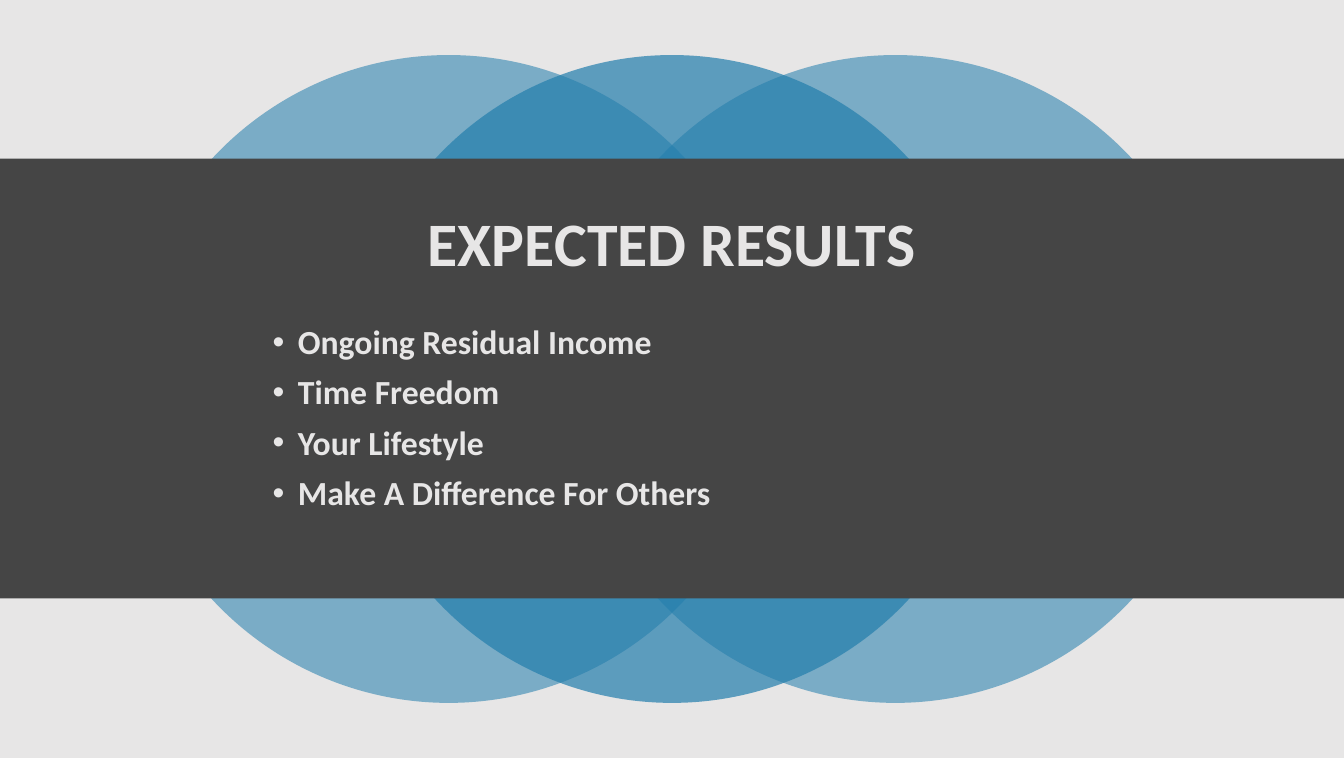
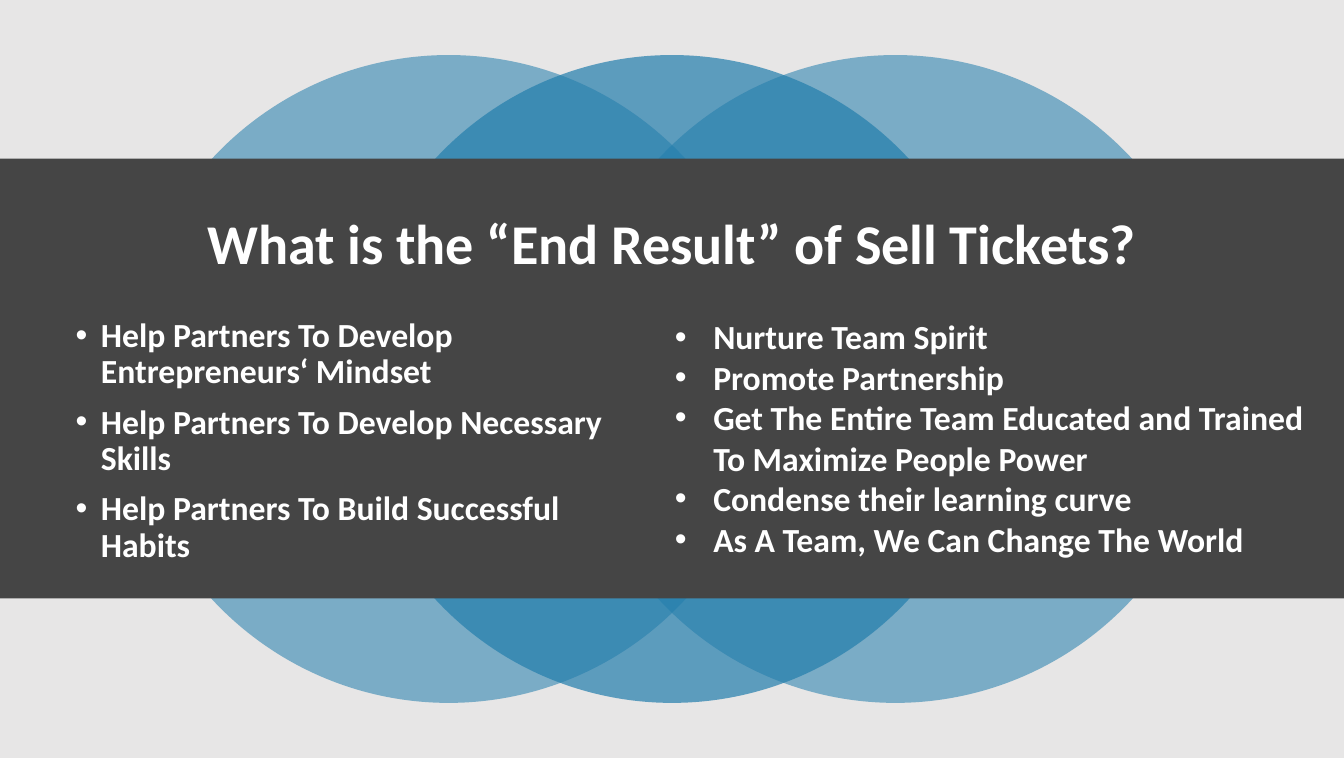
from dataclasses import dataclass
from typing import NamedTuple

from lxml import etree
from pptx import Presentation
from pptx.dml.color import RGBColor
from pptx.enum.shapes import MSO_SHAPE
from pptx.enum.text import MSO_ANCHOR, PP_ALIGN
from pptx.oxml.ns import qn
from pptx.util import Inches, Pt

OVAL, RECTANGLE = MSO_SHAPE.OVAL, MSO_SHAPE.RECTANGLE
MIDDLE, TOP = MSO_ANCHOR.MIDDLE, MSO_ANCHOR.TOP
CENTER = PP_ALIGN.CENTER


@dataclass(frozen=True)
class Theme:
    font: str = "Calibri"
    pale: str = "E7E6E6"
    dark: str = "454545"
    blue: str = "227DAC"
    white: str = "FFFFFF"
    title_size: int = 44
    long_title_size: int = 40
    body_size: int = 24


class Box(NamedTuple):
    left: float
    top: float
    width: float
    height: float

    def inches(self):
        return [Inches(length) for length in self]


class ListStyle(NamedTuple):
    indent: float
    line_spacing: float
    space_before: float


THEME = Theme()
PAGE = Box(0, 0, 13.3, 7.5)
BAND = Box(0, 1.57, PAGE.width, 4.35)
CIRCLE_WIDTH, CIRCLE_HEIGHT, CIRCLE_STEP = 6.39, 6.41, 2.21
SPACED = ListStyle(indent=0.25, line_spacing=0.9, space_before=10)
COMPACT = ListStyle(indent=0.38, line_spacing=1, space_before=0)


def add_filled(shapes, kind, box, color, opacity=100):
    """Add a borderless shape; opacity is a percentage."""
    shape = shapes.add_shape(kind, *box.inches())
    shape.shadow.inherit = False
    shape.fill.solid()
    shape.fill.fore_color.rgb = RGBColor.from_string(color)
    shape.line.fill.background()
    if opacity < 100:
        tint = shape.fill._xPr.find(".//" + qn("a:srgbClr"))
        etree.SubElement(tint, qn("a:alpha"), val=str(opacity * 1000))


def add_circles(page, box):
    """Three overlapping circles centred in the box, the middle one in front."""
    group = page.shapes.add_group_shape()
    left = box.left + (box.width - CIRCLE_WIDTH) / 2
    top = box.top + (box.height - CIRCLE_HEIGHT) / 2
    for step, opacity in ((-1, 55), (1, 55), (0, 70)):
        circle = Box(left + step * CIRCLE_STEP, top, CIRCLE_WIDTH, CIRCLE_HEIGHT)
        add_filled(group.shapes, OVAL, circle, THEME.blue, opacity)


def add_text(page, box, lines, size, color, anchor=TOP):
    """Add bold text, one paragraph a line, and return its paragraphs."""
    frame = page.shapes.add_textbox(*box.inches()).text_frame
    frame.word_wrap = True
    frame.vertical_anchor = anchor
    frame.text = "\n".join(lines)
    for para in frame.paragraphs:
        for span in para.runs:
            span.font.name = THEME.font
            span.font.size = Pt(size)
            span.font.bold = True
            span.font.color.rgb = RGBColor.from_string(color)
    return frame.paragraphs


def add_title(page, band, title, size, color):
    box = Box(band.left + 0.5, band.top + 0.36, band.width - 1, 1.02)
    for para in add_text(page, box, [title], size, color, MIDDLE):
        para.alignment = CENTER
        para.line_spacing = 0.9


def add_bullets(page, box, lines, color, style):
    for para in add_text(page, box, lines, THEME.body_size, color):
        para.line_spacing = style.line_spacing
        para.space_before = Pt(style.space_before)
        properties = para._p.get_or_add_pPr()
        properties.set("marL", str(Inches(style.indent)))
        properties.set("indent", str(-Inches(style.indent)))
        etree.SubElement(properties, qn("a:buFont"), typeface="Arial")
        etree.SubElement(properties, qn("a:buChar"), char="•")


def add_page(deck, title, title_size, color, lists):
    """Add a banded page; lists holds (box, lines, style) with boxes relative to the band."""
    page = deck.slides.add_slide(deck.slide_layouts[6])
    page.background.fill.solid()
    page.background.fill.fore_color.rgb = RGBColor.from_string(THEME.pale)
    add_circles(page, PAGE)
    add_filled(page.shapes, RECTANGLE, BAND, THEME.dark)
    add_title(page, BAND, title, title_size, color)
    for box, lines, style in lists:
        placed = box._replace(left=BAND.left + box.left, top=BAND.top + box.top)
        add_bullets(page, placed, lines, color, style)


def main():
    deck = Presentation()
    deck.slide_width, deck.slide_height = Inches(PAGE.width), Inches(PAGE.height)
    add_page(deck, "EXPECTED RESULTS", THEME.title_size, THEME.pale, [
        (Box(2.6, 1.6, 8.1, 2.31), [
            "Ongoing Residual Income",
            "Time Freedom",
            "Your Lifestyle",
            "Make A Difference For Others",
        ], SPACED),
    ])
    add_page(deck, "What is the “End Result” of Sell Tickets?",
             THEME.long_title_size, THEME.white, [
        (Box(0.65, 1.53, 5.75, 2.31), [
            "Help Partners To Develop Entrepreneurs‘ Mindset",
            "Help Partners To Develop Necessary Skills",
            "Help Partners To Build Successful Habits",
        ], SPACED),
        (Box(6.58, 1.51, 6.65, 2.52), [
            "Nurture Team Spirit",
            "Promote Partnership",
            "Get The Entire Team Educated and Trained To Maximize People Power",
            "Condense their learning curve",
            "As A Team, We Can Change The World",
        ], COMPACT),
    ])
    deck.save("out.pptx")


if __name__ == "__main__":
    main()
